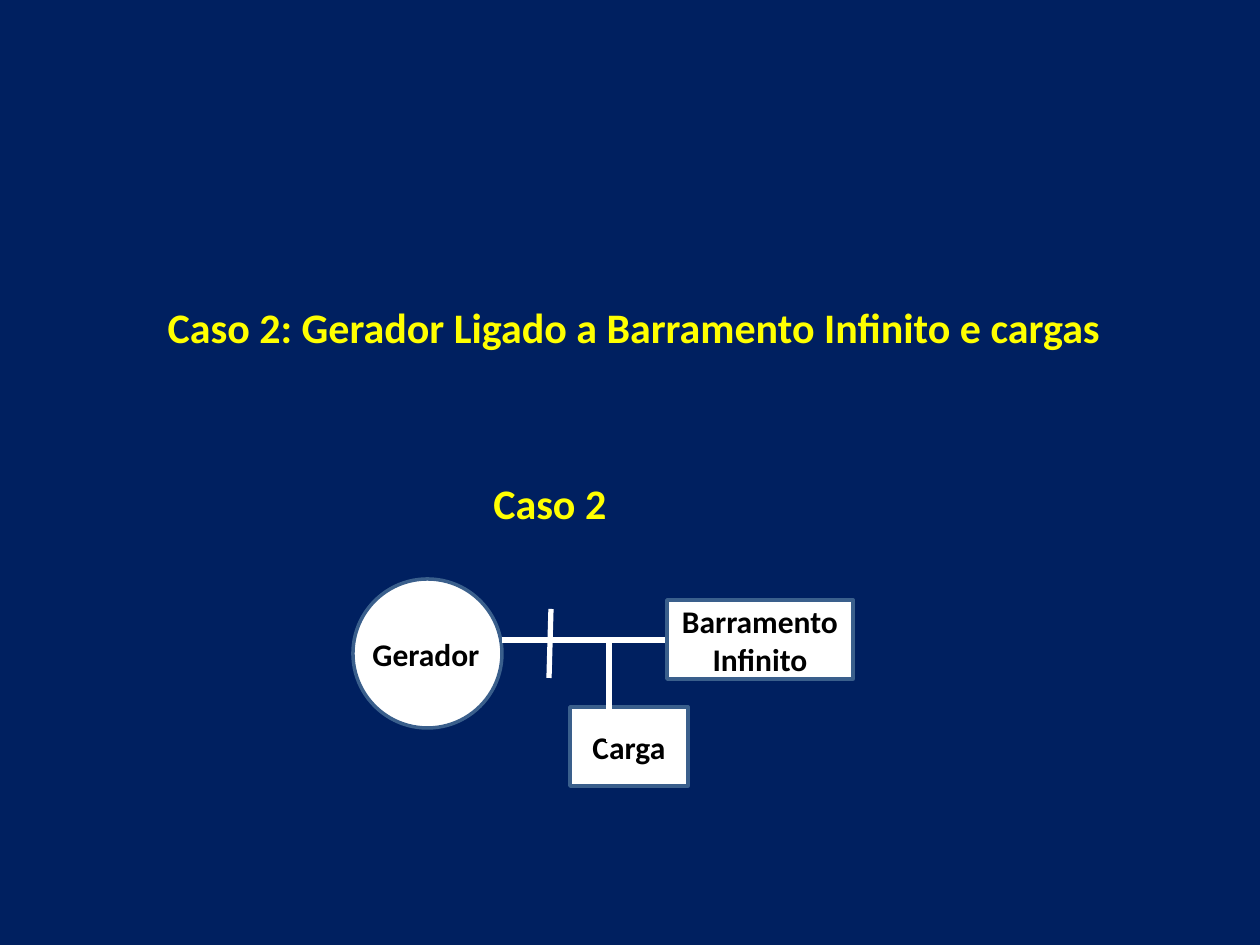
from lxml import etree
from pptx import Presentation
from pptx.dml.color import RGBColor
from pptx.enum.shapes import MSO_CONNECTOR, MSO_SHAPE
from pptx.enum.text import MSO_ANCHOR, MSO_AUTO_SIZE, PP_ALIGN
from pptx.oxml.ns import qn
from pptx.util import Emu, Pt

LINE = MSO_CONNECTOR.STRAIGHT
OVAL, RECT = MSO_SHAPE.OVAL, MSO_SHAPE.RECTANGLE
MIDDLE, TOP = MSO_ANCHOR.MIDDLE, MSO_ANCHOR.TOP
LEFT, CENTER = PP_ALIGN.LEFT, PP_ALIGN.CENTER
GROW = MSO_AUTO_SIZE.SHAPE_TO_FIT_TEXT

SCALE = 914400 / 126
COLORS = {
    "back": "002060",
    "head": "FFFF00",
    "fill": "FFFFFF",
    "edge": "3A5F8C",
    "text": "000000",
}


def px(*sizes):
    return [Emu(round(size * SCALE)) for size in sizes]


def color(name):
    return RGBColor.from_string(COLORS[name])


def write(shape, text, size, tint, align):
    frame = shape.text_frame
    frame.text = text
    for par in frame.paragraphs:
        par.alignment = align
        font = par.font
        font.name, font.size, font.bold = "Calibri", Pt(size), True
        font.color.rgb = color(tint)
    return frame


def set_label(shape, text, size, tint, align):
    """Write text that stays on one line at the top of its shape."""
    frame = write(shape, text, size, tint, align)
    frame.word_wrap = False
    frame.auto_size = GROW
    frame.vertical_anchor = TOP


def add_title(slide, text, box):
    title = slide.shapes.title
    title.left, title.top, title.width, title.height = px(*box)
    set_label(title, text, 24, "head", LEFT)


def add_label(slide, text, box, size, tint, align):
    set_label(slide.shapes.add_textbox(*px(*box)), text, size, tint, align)


def add_node(slide, kind, box, text=""):
    node = slide.shapes.add_shape(kind, *px(*box))
    node.shadow.inherit = False
    node.fill.solid()
    node.fill.fore_color.rgb = color("fill")
    node.line.color.rgb = color("edge")
    node.line.width = Pt(2)
    if text:
        write(node, text, 18, "text", CENTER).vertical_anchor = MIDDLE


def add_wire(slide, *ends):
    wire = slide.shapes.add_connector(LINE, *px(*ends))
    wire.line.color.rgb = color("fill")
    wire.line.width = Pt(3)
    etree.SubElement(wire._element.spPr, qn("a:effectLst"))


def main():
    deck = Presentation()
    deck.slide_width, deck.slide_height = px(1260, 945)
    slide = deck.slides.add_slide(deck.slide_layouts[5])
    slide.background.fill.solid()
    slide.background.fill.fore_color.rgb = color("back")

    add_title(slide, "Caso 2: Gerador Ligado a Barramento Infinito e cargas",
              (155, 295, 966, 63))
    add_label(slide, "Caso 2", (481, 471, 140, 63), 24, "head", LEFT)

    add_node(slide, OVAL, (353, 579, 149, 149))
    add_wire(slide, 502, 640, 711, 640)
    add_node(slide, RECT, (570, 707, 118, 79), "Carga")
    add_label(slide, "Gerador", (359, 629, 134, 50), 18, "text", CENTER)
    add_wire(slide, 551, 609, 549, 678)
    add_wire(slide, 609, 742, 609, 639)
    add_node(slide, RECT, (667, 600, 186, 79), "Barramento\nInfinito")
    deck.save("out.pptx")


if __name__ == "__main__":
    main()
